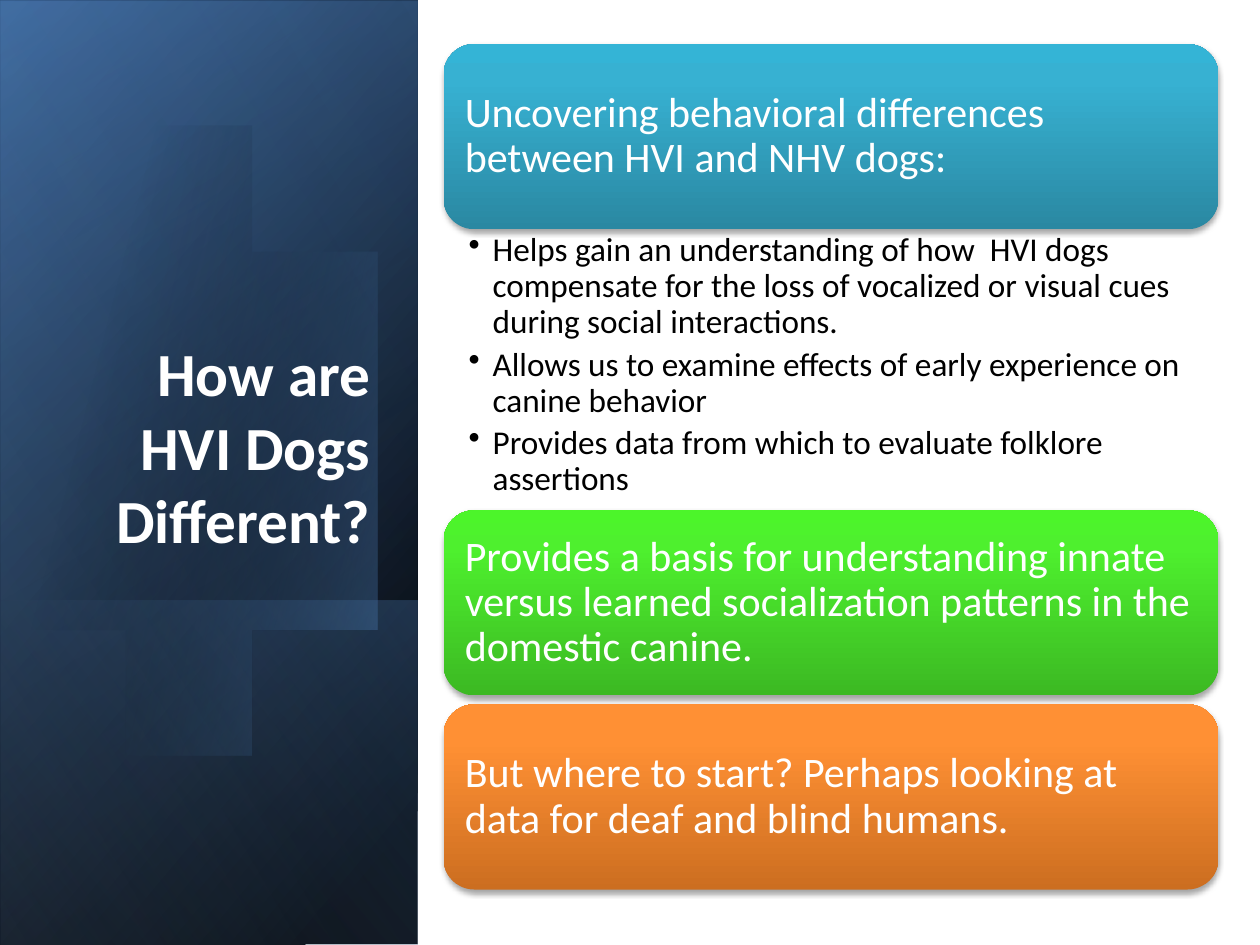
import pptx
import pptx.dml.color
import pptx.enum.shapes
import pptx.enum.text
import pptx.oxml
import pptx.oxml.ns
import pptx.util

Inches = pptx.util.Inches
Pt = pptx.util.Pt
qn = pptx.oxml.ns.qn
Shapes = pptx.enum.shapes.MSO_SHAPE
Anchor = pptx.enum.text.MSO_ANCHOR
Align = pptx.enum.text.PP_ALIGN

COLORS = {
    "black": "000000", "white": "FFFFFF", "navy": "376092",
    "blue": "4F81BD", "pale": "95B3D7",
}
NAMESPACE = 'xmlns:a="http://schemas.openxmlformats.org/drawingml/2006/main"'


def bezier(start, first, second, end, steps=24):
    """Points along a cubic curve, without its start."""
    points = []
    for step in range(1, steps + 1):
        t = step / steps
        weights = ((1 - t) ** 3, 3 * t * (1 - t) ** 2, 3 * t * t * (1 - t), t ** 3)
        corners = (start, first, second, end)
        points.append(tuple(sum(w * c[axis] for w, c in zip(weights, corners))
                            for axis in (0, 1)))
    return points


class SlideBuilder:
    font = "Calibri"

    def __init__(self, page):
        self.page = page

    def gradient(self, shape, stops, angle):
        """Stops are (position %, colour, opacity %); angle runs clockwise."""
        shape.shadow.inherit = False
        shape.line.fill.background()
        shape.fill.gradient()
        shape.fill.gradient_angle = (360 - angle) % 360
        stop_list = shape.fill._xPr.find(qn("a:gradFill")).find(qn("a:gsLst"))
        for old in list(stop_list):
            stop_list.remove(old)
        for position, color, opacity in stops:
            stop_list.append(pptx.oxml.parse_xml(
                f'<a:gs {NAMESPACE} pos="{position * 1000}"><a:srgbClr val="{color}">'
                f'<a:alpha val="{opacity * 1000}"/></a:srgbClr></a:gs>'))

    def panel(self, left, top, width, height, stops, angle):
        """A mirrored rectangle on its side."""
        shape = self.page.shapes.add_shape(
            Shapes.RECTANGLE, Inches(left), Inches(top), Inches(width), Inches(height))
        shape.rotation = 90
        shape._element.spPr.find(qn("a:xfrm")).set("flipH", "1")
        self.gradient(shape, stops, angle)

    def outline(self, points, stops, angle):
        builder = self.page.shapes.build_freeform(
            *points[0], scale=float(Inches(1)))
        builder.add_line_segments(points[1:], close=True)
        self.gradient(builder.convert_to_shape(), stops, angle)

    def text(self, left, top, width, height, lines, size, color, anchor=Anchor.TOP,
             insets=(0.1, 0.1, 0.1, 0.1), align=Align.LEFT, bold=False,
             spacing=0.9, after=0, bullets=False):
        box = self.page.shapes.add_textbox(
            Inches(left), Inches(top), Inches(width), Inches(height))
        frame = box.text_frame
        frame.word_wrap = True
        frame.vertical_anchor = anchor
        (frame.margin_left, frame.margin_top,
         frame.margin_right, frame.margin_bottom) = map(Inches, insets)
        for index, line in enumerate(lines):
            para = frame.paragraphs[0] if index == 0 else frame.add_paragraph()
            para.text = line
            para.alignment = align
            para.line_spacing = spacing
            para.space_after = Pt(after)
            para.font.name = self.font
            para.font.size = Pt(size)
            para.font.bold = bold
            para.font.color.rgb = pptx.dml.color.RGBColor.from_string(COLORS[color])
            if bullets:
                self.bullet(para)

    def bullet(self, para):
        properties = para._p.get_or_add_pPr()
        properties.set("marL", str(Inches(0.19)))
        properties.set("indent", str(-Inches(0.19)))
        properties.append(pptx.oxml.parse_xml(f'<a:buChar {NAMESPACE} char="•"/>'))
        # Bullet marks must come before the font defaults
        defaults = properties.find(qn("a:defRPr"))
        if defaults is not None:
            properties.append(defaults)

    def card(self, top, line, shades):
        left, width, height, margin = 3.52, 6.15, 1.47, 0.07
        shape = self.page.shapes.add_shape(
            Shapes.ROUNDED_RECTANGLE, Inches(left), Inches(top),
            Inches(width), Inches(height))
        stops = [(position, shade, 100) for position, shade in zip((0, 80, 100), shades)]
        self.gradient(shape, stops, 270)
        effects = shape._element.spPr.find(qn("a:effectLst"))
        effects.append(pptx.oxml.parse_xml(
            f'<a:outerShdw {NAMESPACE} blurRad="{Pt(3.1)}" dist="{Pt(1.8)}" '
            'dir="5400000" rotWithShape="0"><a:srgbClr val="000000">'
            '<a:alpha val="35000"/></a:srgbClr></a:outerShdw>'))
        self.text(left + margin, top + margin, width - 2 * margin, height - 2 * margin,
                  [line], 24, "white", anchor=Anchor.MIDDLE, after=8.4)


def main():
    deck = pptx.Presentation()
    deck.slide_width, deck.slide_height = Inches(10), Inches(7.5)
    slide = SlideBuilder(deck.slides.add_slide(deck.slide_layouts[6]))
    black, blue = COLORS["black"], COLORS["blue"]

    # Layered side panel
    slide.panel(-2.09, 2.09, 7.5, 3.31, [(8, black, 100), (100, COLORS["navy"], 100)], 50)
    slide.panel(-2.09, 2.11, 7.5, 3.31, [(0, black, 0), (99, blue, 46)], 30)
    slide.panel(0.29, 4.48, 2.74, 3.31, [(2, blue, 29), (100, black, 30)], 130)

    # Tilted oval cut by the left edge
    oval = [(0.96, 1.14)]
    for curve in [((1.71, 1.22), (2.44, 1.92), (2.73, 2.9)),
                  ((3.07, 4.12), (2.62, 5.31), (1.71, 5.57)),
                  ((1.14, 5.74), (0.53, 5.5), (0.07, 5))]:
        oval += bezier(oval[-1], *curve)
    oval += [(-0.03, 4.88), (-0.25, 1.66), (-0.15, 1.54)]
    for curve in [((0.02, 1.37), (0.22, 1.25), (0.45, 1.18)),
                  ((0.62, 1.13), (0.79, 1.12), (0.96, 1.14))]:
        oval += bezier(oval[-1], *curve)
    slide.outline(oval, [(29, black, 0), (100, blue, 43)], 14)

    # Sheen over the panel
    slide.panel(-2.09, 2.09, 7.5, 3.31, [(0, black, 0), (99, COLORS["pale"], 11)], 120)

    # Title
    slide.text(0.48, 1.84, 2.56, 2.62, ["How are HVI Dogs Different?"], 35, "white",
               anchor=Anchor.BOTTOM, insets=(0.1, 0.05, 0.1, 0.05),
               align=Align.RIGHT, bold=True, spacing=1.0)

    # Cards, with the bullets under the first
    slide.card(0.35, "Uncovering behavioral differences between HVI and NHV dogs:",
               ("2A88A2", "37B1D2", "34B4D6"))
    slide.text(3.52, 1.82, 6.15, 2.23, [
        "Helps gain an understanding of how  HVI dogs compensate for the loss of "
        "vocalized or visual cues during social interactions.",
        "Allows us to examine effects of early experience on canine behavior",
        "Provides data from which to evaluate folklore assertions",
    ], 19, "black", insets=(0.2, 0.03, 0.19, 0.03), after=3.8, bullets=True)
    slide.card(4.05, "Provides a basis for understanding innate versus learned "
               "socialization patterns in the domestic canine.",
               ("3CB923", "4EF02E", "4CF52A"))
    slide.card(5.59, "But where to start? Perhaps looking at data for deaf and blind humans.",
               ("CC6E20", "FF9034", "FF9136"))

    deck.save("out.pptx")


if __name__ == "__main__":
    main()
